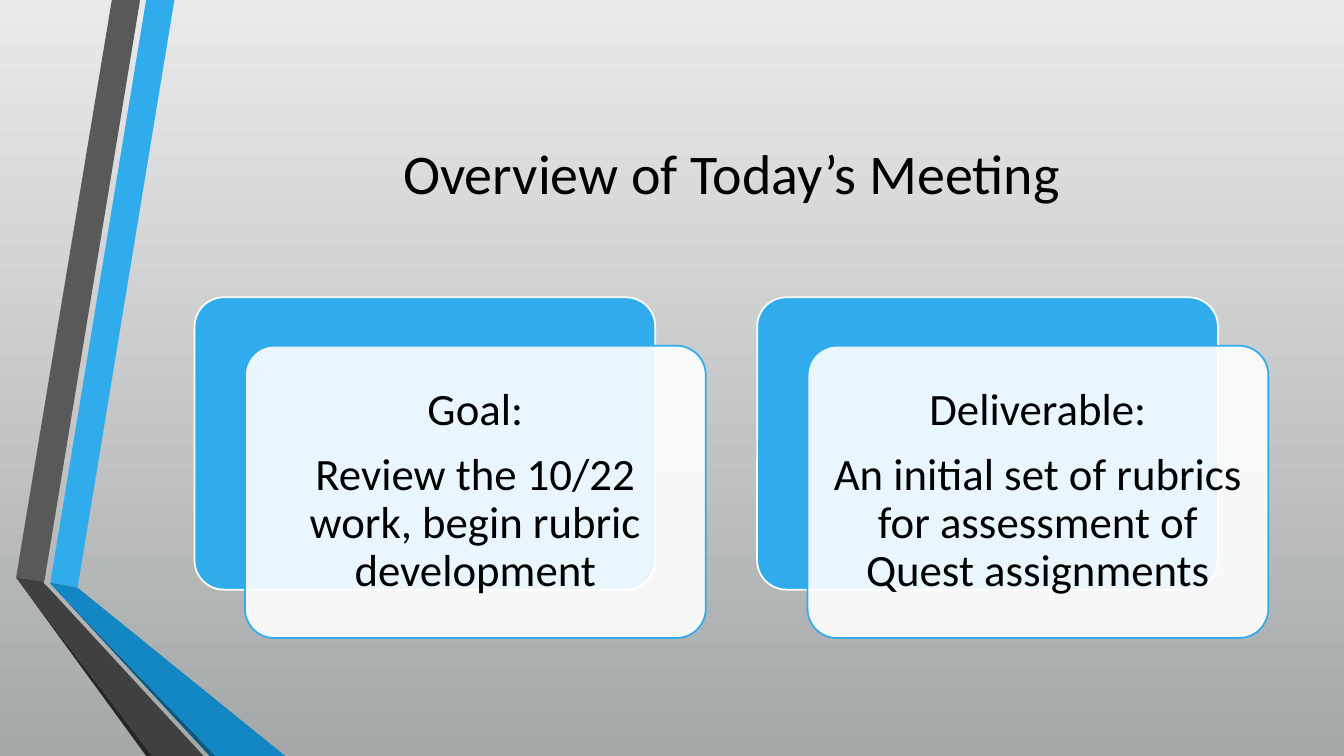
from lxml.etree import SubElement
from pptx import Presentation
from pptx.dml.color import RGBColor
from pptx.enum.shapes import MSO_SHAPE
from pptx.enum.text import MSO_ANCHOR, PP_ALIGN
from pptx.oxml.ns import qn
from pptx.util import Inches, Pt

BLACK = RGBColor(0x00, 0x00, 0x00)
WHITE = RGBColor(0xFF, 0xFF, 0xFF)
BLUE = RGBColor(0x30, 0xAC, 0xEC)
MID_BLUE = RGBColor(0x12, 0x87, 0xC3)
DARK_BLUE = RGBColor(0x0C, 0x5A, 0x82)
GRAY = RGBColor(0x59, 0x59, 0x59)
DARK_GRAY = RGBColor(0x40, 0x40, 0x40)
DEEP_GRAY = RGBColor(0x26, 0x26, 0x26)
BACKGROUND_TOP = RGBColor(0xE9, 0xEA, 0xEB)
BACKGROUND_BOTTOM = RGBColor(0xA5, 0xA8, 0xA9)

TITLE = "Overview of Today’s Meeting"
CARDS = [
    ("Goal:", "Review the 10/22 work, begin rubric development"),
    ("Deliverable:", "An initial set of rubrics for assessment of Quest assignments"),
]
RIBBONS = [
    (BLUE, [(0.5, 5.78), (0.77, 5.83), (1.73, 0), (1.45, 0)]),
    (GRAY, [(1.39, 0), (1.11, 0), (0.16, 5.73), (0.44, 5.77)]),
    (DEEP_GRAY, [(0.16, 5.73), (1.45, 7.5), (1.51, 7.5)]),
    (DARK_BLUE, [(0.5, 5.79), (2.08, 7.5), (2.14, 7.5)]),
    (MID_BLUE, [(0.5, 5.79), (2.14, 7.5), (2.83, 7.5), (0.77, 5.83), (0.5, 5.78)]),
    (DARK_GRAY, [(2.02, 7.5), (0.48, 5.83), (0.43, 5.78), (0.44, 5.77),
                 (0.16, 5.73), (1.51, 7.5)]),
]

CARD_LEFT, CARD_TOP, CARD_STEP = 1.93, 2.95, 5.58
CARD_WIDTH, CARD_HEIGHT = 4.57, 2.9
FRONT_SHIFT_X, FRONT_SHIFT_Y = 0.5, 0.48
TEXT_MARGIN, TEXT_INSET = 0.085, 0.13

TITLE_FONT = {"name": "Calibri", "size": Pt(40)}
CARD_FONT = {"name": "Calibri", "size": Pt(32)}
TITLE_PARAGRAPH = {"alignment": PP_ALIGN.CENTER}
CARD_PARAGRAPH = {"alignment": PP_ALIGN.CENTER, "line_spacing": 0.9,
                  "space_after": Pt(11.2)}


def set_attributes(target, values):
    for name, value in values.items():
        setattr(target, name, value)


def paint_background(slide):
    fill = slide.background.fill
    fill.gradient()
    fill.gradient_angle = 270
    for stop, color in zip(fill.gradient_stops, (BACKGROUND_TOP, BACKGROUND_BOTTOM)):
        stop.color.rgb = color


def add_ribbon(slide, color, points):
    corners = [(Inches(x), Inches(y)) for x, y in points]
    builder = slide.shapes.build_freeform(*corners[0])
    builder.add_line_segments(corners[1:], close=True)
    shape = builder.convert_to_shape()
    shape.shadow.inherit = False
    shape.fill.solid()
    shape.fill.fore_color.rgb = color
    shape.line.fill.background()


def add_panel(slide, left, top, fill_color, line_color, opacity=100):
    shape = slide.shapes.add_shape(
        MSO_SHAPE.ROUNDED_RECTANGLE, Inches(left), Inches(top),
        Inches(CARD_WIDTH), Inches(CARD_HEIGHT))
    shape.adjustments[0] = 0.1
    shape.shadow.inherit = False
    shape.fill.solid()
    shape.fill.fore_color.rgb = fill_color
    shape.line.color.rgb = line_color
    shape.line.width = Pt(1.25)
    if opacity < 100:
        color = shape.fill._xPr.find(qn("a:solidFill"))[0]
        SubElement(color, qn("a:alpha")).set("val", str(opacity * 1000))


def add_text(slide, box, lines, font_values, paragraph_values, inset):
    frame = slide.shapes.add_textbox(*map(Inches, box)).text_frame
    set_attributes(frame, {"word_wrap": True, "vertical_anchor": MSO_ANCHOR.MIDDLE})
    for side in ("left", "top", "right", "bottom"):
        setattr(frame, f"margin_{side}", Inches(inset))
    frame.text = "\n".join(lines)
    for paragraph in frame.paragraphs:
        set_attributes(paragraph, paragraph_values)
        for run in paragraph.runs:
            set_attributes(run.font, font_values)
            run.font.color.rgb = BLACK


def add_card(slide, left, lines):
    front_left, front_top = left + FRONT_SHIFT_X, CARD_TOP + FRONT_SHIFT_Y
    add_panel(slide, left, CARD_TOP, BLUE, WHITE)
    add_panel(slide, front_left, front_top, WHITE, BLUE, opacity=90)
    box = (front_left + TEXT_MARGIN, front_top + TEXT_MARGIN,
           CARD_WIDTH - 2 * TEXT_MARGIN, CARD_HEIGHT - 2 * TEXT_MARGIN)
    add_text(slide, box, lines, CARD_FONT, CARD_PARAGRAPH, TEXT_INSET)


def main():
    presentation = Presentation()
    presentation.slide_width = Inches(13.33)
    presentation.slide_height = Inches(7.5)
    slide = presentation.slides.add_slide(presentation.slide_layouts[6])
    paint_background(slide)
    for color, points in RIBBONS:
        add_ribbon(slide, color, points)
    add_text(slide, (1.93, 0.75, 10.65, 1.92), [TITLE], TITLE_FONT, TITLE_PARAGRAPH, 0.1)
    for index, lines in enumerate(CARDS):
        add_card(slide, CARD_LEFT + index * CARD_STEP, lines)
    presentation.save("out.pptx")


if __name__ == "__main__":
    main()
